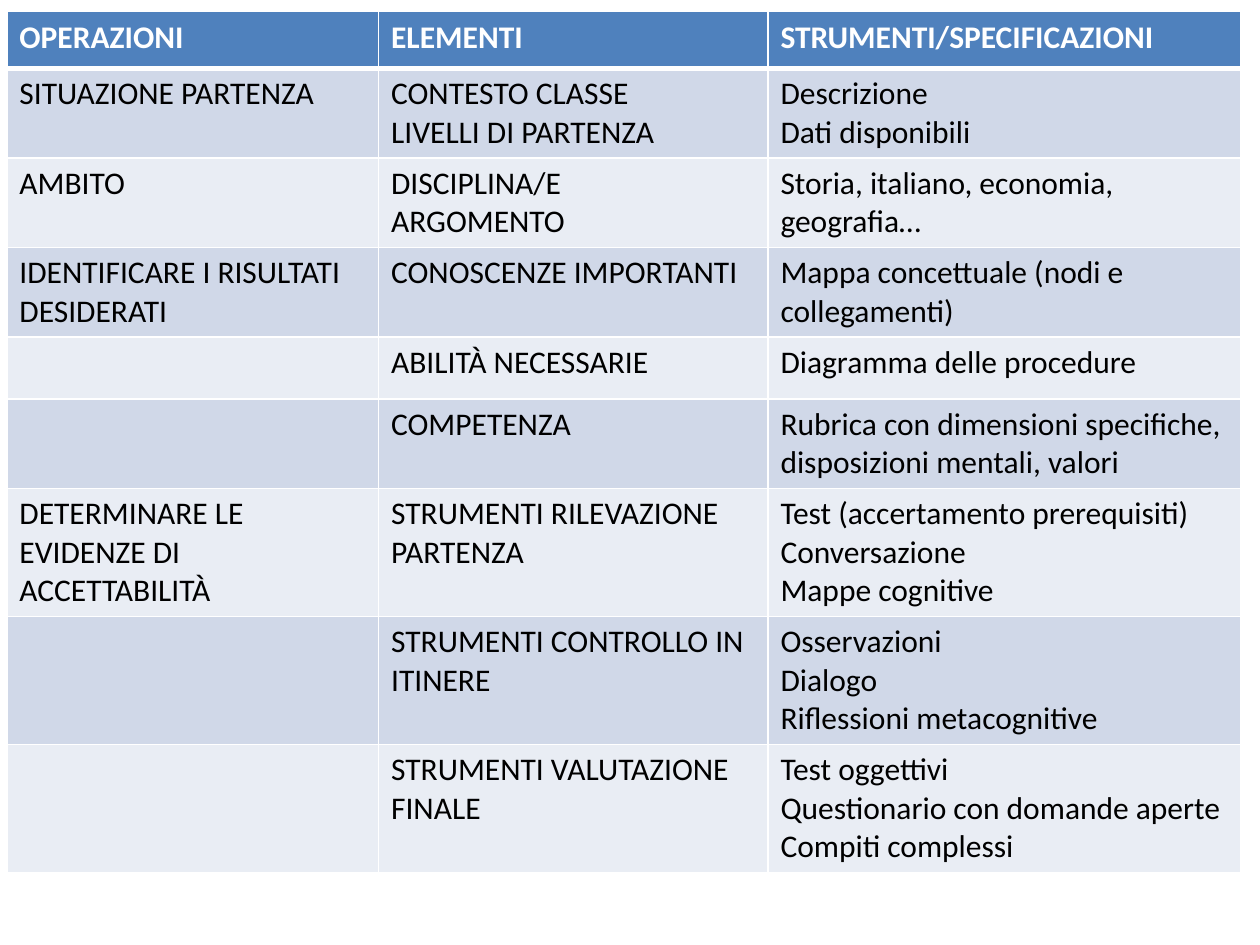
from lxml.etree import SubElement
from pptx import Presentation
from pptx.dml.color import RGBColor as Rgb
from pptx.oxml.ns import qn
from pptx.util import Pt

# Content: one tuple per row, one list of paragraphs per cell
HEADER = (["OPERAZIONI"], ["ELEMENTI"], ["STRUMENTI/SPECIFICAZIONI"])
ROWS = [
    (["SITUAZIONE PARTENZA"], ["CONTESTO CLASSE", "LIVELLI DI PARTENZA"],
     ["Descrizione", "Dati disponibili"]),
    (["AMBITO"], ["DISCIPLINA/E", "ARGOMENTO"],
     ["Storia, italiano, economia, geografia…"]),
    (["IDENTIFICARE I RISULTATI DESIDERATI"], ["CONOSCENZE IMPORTANTI"],
     ["Mappa concettuale (nodi e collegamenti)"]),
    ([], ["ABILITÀ NECESSARIE"], ["Diagramma delle procedure"]),
    ([], ["COMPETENZA"],
     ["Rubrica con dimensioni specifiche,", "disposizioni mentali, valori"]),
    (["DETERMINARE LE EVIDENZE DI ACCETTABILITÀ"],
     ["STRUMENTI RILEVAZIONE PARTENZA"],
     ["Test (accertamento prerequisiti)", "Conversazione", "Mappe cognitive"]),
    ([], ["STRUMENTI CONTROLLO IN ITINERE"],
     ["Osservazioni", "Dialogo", "Riflessioni metacognitive"]),
    ([], ["STRUMENTI VALUTAZIONE FINALE"],
     ["Test oggettivi", "Questionario con domande aperte", "Compiti complessi"]),
]

THEME = {
    "font": "Calibri", "size": 18,
    "header_fill": "4F81BD", "header_text": "FFFFFF",
    "bands": ("D0D8E8", "E9EDF4"), "text": "000000",
    "border": "FFFFFF", "thin": 1, "thick": 3,
}

# Geometry in points
LEFT, TOP, TABLE_HEIGHT = 3.9, 6.7, 485.3
COLUMN_WIDTHS = (212.4, 222.5, 270)
HEADER_HEIGHT, ROW_HEIGHT, SHORT_HEIGHT = 32.4, 43.9, 35.3
SHORT_ROW = 4


def set_borders(cell, top, bottom):
    properties = cell._tc.get_or_add_tcPr()
    thin = THEME["thin"]
    for side, width in (("L", thin), ("R", thin), ("T", top), ("B", bottom)):
        line = SubElement(properties, qn(f"a:ln{side}"), w=str(Pt(width)))
        fill = SubElement(line, qn("a:solidFill"))
        SubElement(fill, qn("a:srgbClr"), val=THEME["border"])


def write_cell(cell, lines, color, bold):
    frame = cell.text_frame
    for index, line in enumerate(lines):
        para = frame.add_paragraph() if index else frame.paragraphs[0]
        span = para.add_run()
        span.text = line
        span.font.name = THEME["font"]
        span.font.size = Pt(THEME["size"])
        span.font.bold = bold
        span.font.color.rgb = Rgb.from_string(color)


def row_style(number):
    """Height, fill, text colour, top border and bottom border of a row."""
    thin, thick = THEME["thin"], THEME["thick"]
    if number == 0:
        return HEADER_HEIGHT, THEME["header_fill"], THEME["header_text"], thin, thick
    height = SHORT_HEIGHT if number == SHORT_ROW else ROW_HEIGHT
    top = thick if number == 1 else thin
    return height, THEME["bands"][(number - 1) % 2], THEME["text"], top, thin


def main():
    deck = Presentation()
    deck.slide_width, deck.slide_height = Pt(720), Pt(540)
    page = deck.slides.add_slide(deck.slide_layouts[6])

    # Planning table
    content = [HEADER, *ROWS]
    box = page.shapes.add_table(len(content), len(COLUMN_WIDTHS), Pt(LEFT), Pt(TOP),
                                Pt(sum(COLUMN_WIDTHS)), Pt(TABLE_HEIGHT))
    table = box.table
    for column, width in zip(table.columns, COLUMN_WIDTHS):
        column.width = Pt(width)

    # Header and banded rows
    for number, (row, texts) in enumerate(zip(table.rows, content)):
        height, fill, color, top, bottom = row_style(number)
        row.height = Pt(height)
        for cell, lines in zip(row.cells, texts):
            set_borders(cell, top, bottom)
            cell.fill.solid()
            cell.fill.fore_color.rgb = Rgb.from_string(fill)
            write_cell(cell, lines, color, bold=number == 0)

    # Rows grow with their text, so the frame is taller than their minimum sum
    box.height = Pt(TABLE_HEIGHT)
    deck.save("out.pptx")


if __name__ == "__main__":
    main()
